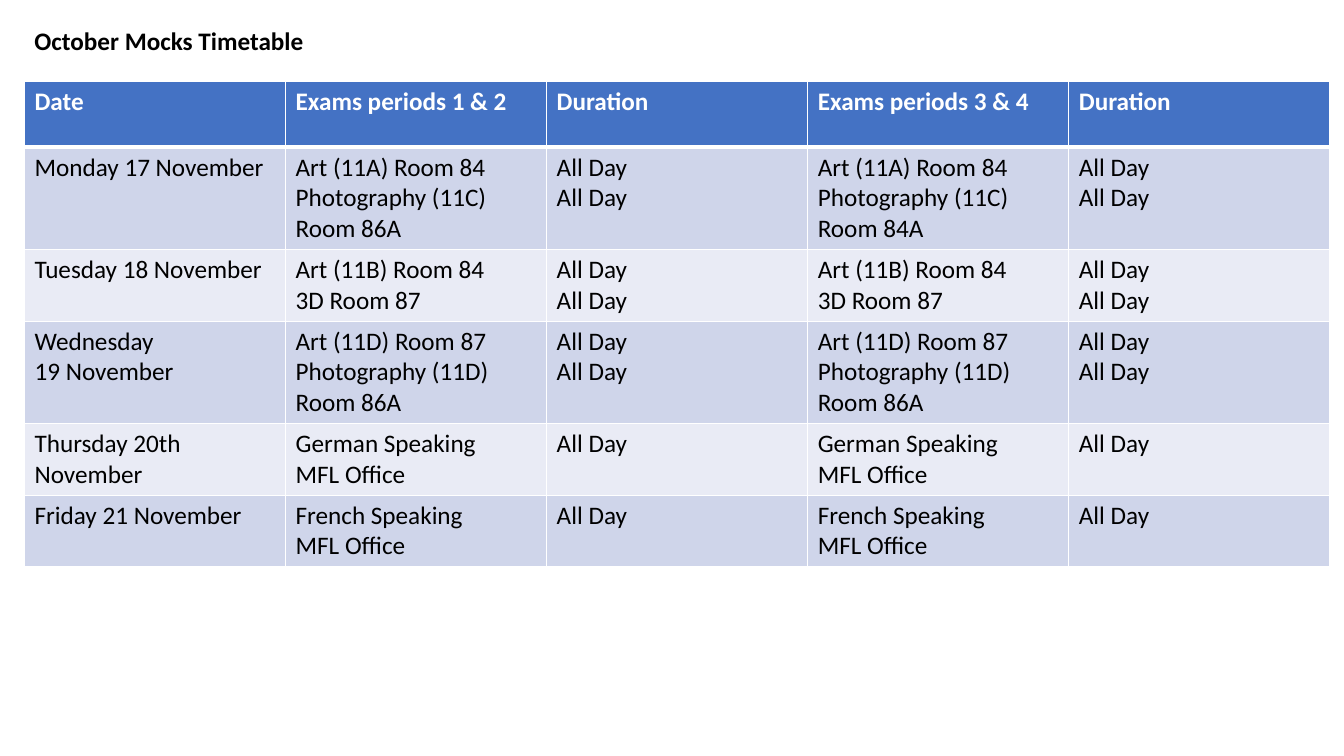
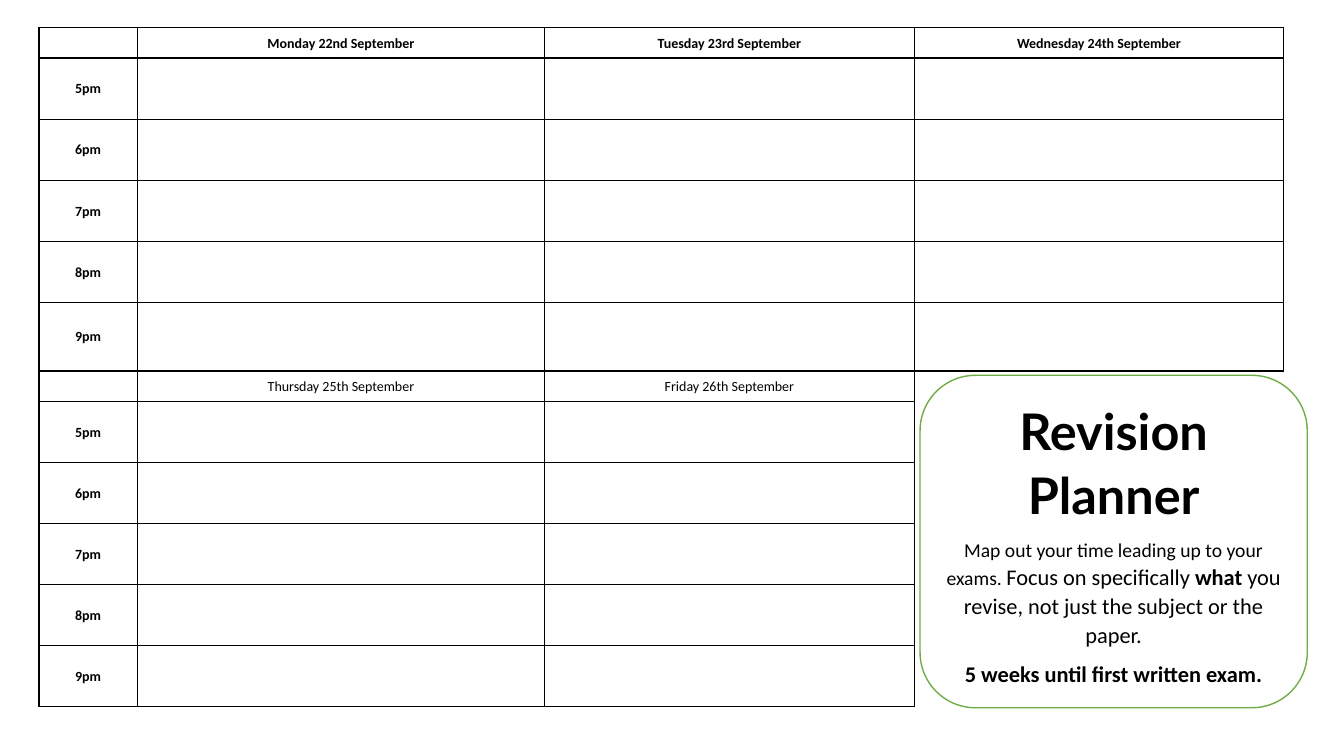
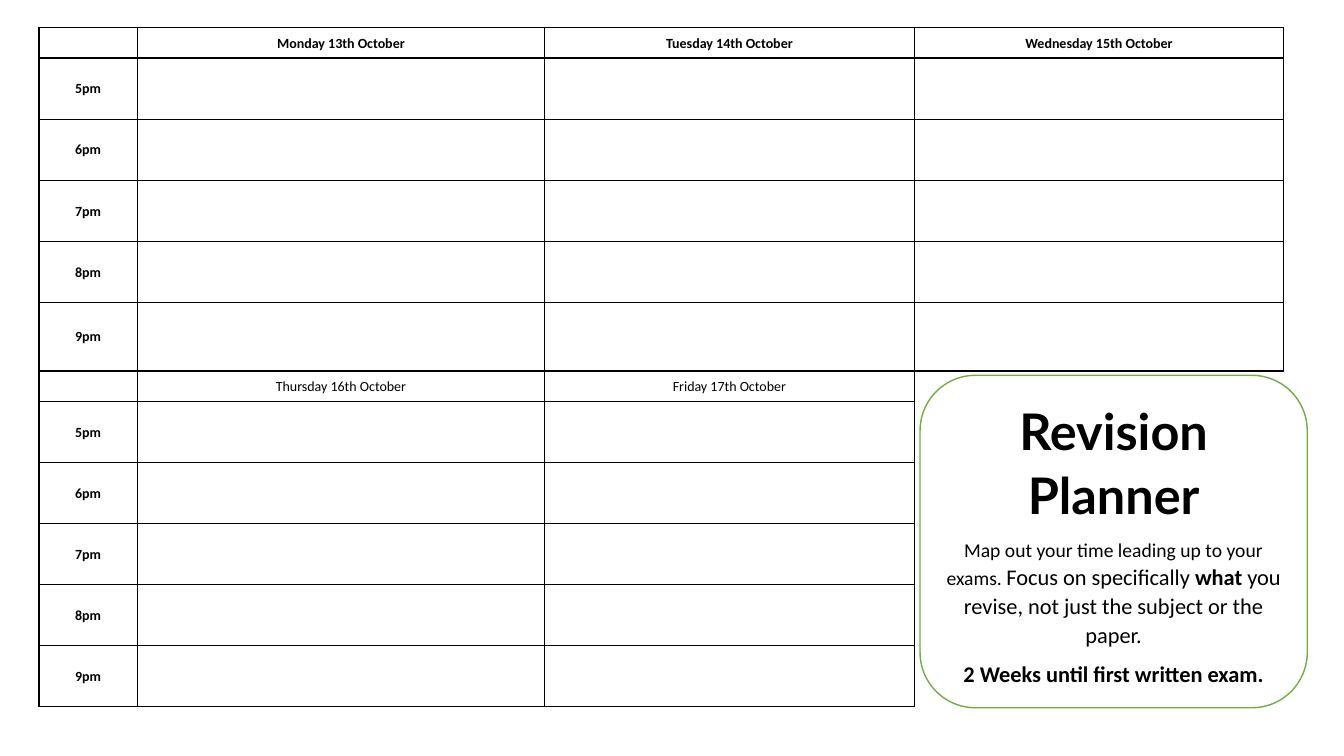
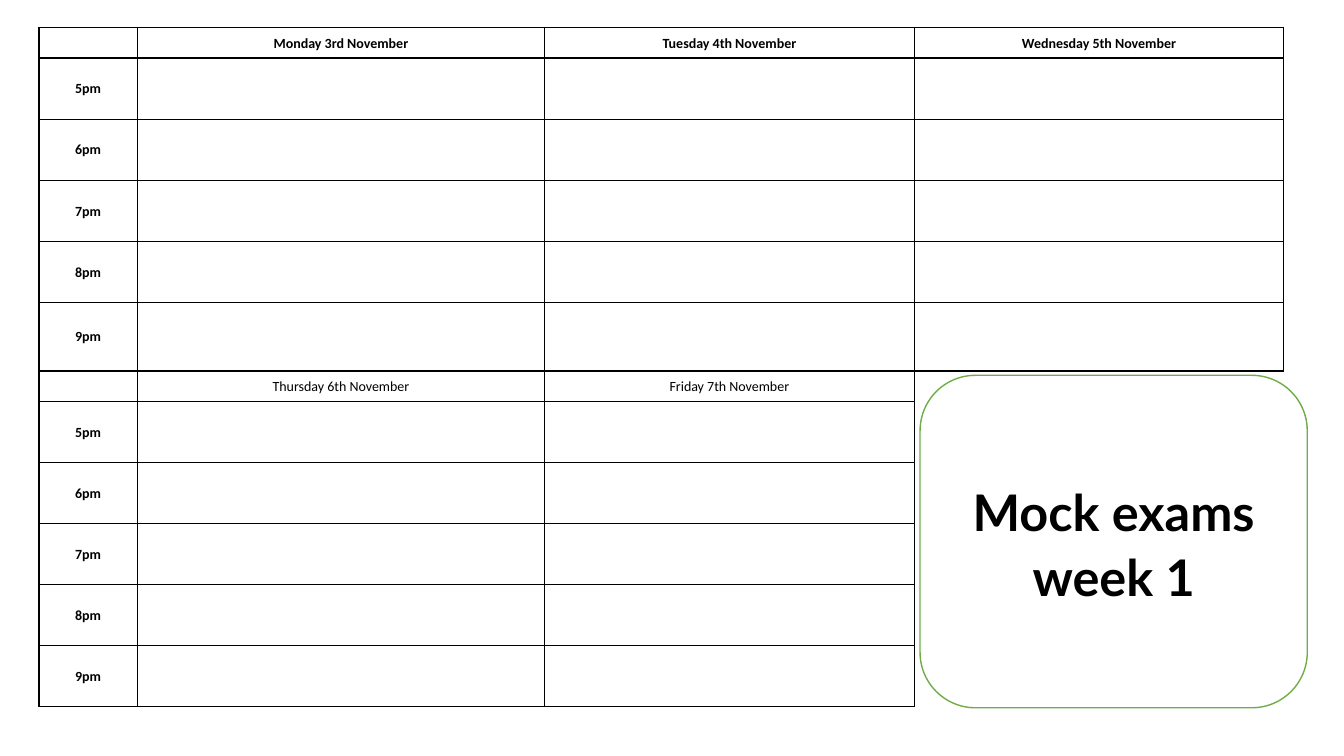
from dataclasses import dataclass, replace

from lxml import etree
from pptx import Presentation
from pptx import util as u
from pptx.dml import color
from pptx.enum import shapes, text
from pptx.oxml import ns

COLOURS = {
    "black": "000000",
    "white": "FFFFFF",
    "header": "4472C4",
    "band_dark": "CFD5EA",
    "band_light": "E9EBF5",
    "outline": "70AD47",
}
NO_BREAK = chr(160)
HOURS = ["5pm", "6pm", "7pm", "8pm", "9pm"]
HOUR_HEIGHT = 43.6
DAY_HEIGHT = 21.9
LAST_HOUR_HEIGHT = 49.2
PLANNER_COLUMNS = [70.2, 291, 264, 264]
PLANNER_ROWS = ([DAY_HEIGHT] + [HOUR_HEIGHT] * 4 + [LAST_HOUR_HEIGHT]
                + [DAY_HEIGHT] + [HOUR_HEIGHT] * 5)
SECOND_HALF = len(HOURS) + 1
EXAM_HEADERS = ["Date", "Exams periods 1 & 2", "Duration", "Exams periods 3 & 4", "Duration"]
EXAM_COLUMNS = [186.5] * 5
EXAM_ROWS = [47.2, 71.3] + [47.2] * 4


@dataclass(frozen=True)
class Style:
    size: float
    bold: bool = False
    colour: str = "black"
    font: str = "Calibri"


@dataclass(frozen=True)
class Span:
    words: str
    style: Style


@dataclass(frozen=True)
class Area:
    left: float
    top: float
    width: float
    height: float

    def lengths(self) -> list:
        return [u.Pt(value) for value in (self.left, self.top, self.width, self.height)]


@dataclass(frozen=True)
class ExamDay:
    date: str
    early: list
    late: list
    sessions: int


@dataclass(frozen=True)
class Week:
    days: list
    panel: list


BODY = Style(18)
BOLD = replace(BODY, bold=True)
HEADER = replace(BOLD, colour="white")
SLOT = Style(10)
SLOT_BOLD = replace(SLOT, bold=True)
PANEL_TITLE = Style(36, bold=True, font="Lato")
PANEL_INTRO = Style(14)
PANEL_BODY = Style(16)
PANEL_BOLD = replace(PANEL_BODY, bold=True)

EXAM_DAYS = [
    ExamDay(f"Monday 17{NO_BREAK}November",
            ["Art (11A) Room 84", "Photography (11C) Room 86A"],
            ["Art (11A) Room 84", "Photography (11C) Room 84A"], 2),
    ExamDay(f"Tuesday 18{NO_BREAK}November",
            *[["Art (11B) Room 84", "3D Room 87"]] * 2, 2),
    ExamDay(f"Wednesday 19{NO_BREAK}November",
            *[["Art (11D) Room 87", "Photography (11D) Room 86A"]] * 2, 2),
    ExamDay("Thursday 20th November", *[["German Speaking", "MFL Office"]] * 2, 1),
    ExamDay(f"Friday 21{NO_BREAK}November", *[["French Speaking", "MFL Office"]] * 2, 1),
]


def revision_panel(countdown: str) -> list:
    return [
        [Span("Revision Planner", PANEL_TITLE)],
        [
            Span("Map out your time leading up to your exams. ", PANEL_INTRO),
            Span("Focus on specifically ", PANEL_BODY),
            Span("what", PANEL_BOLD),
            Span(" you revise, not just the subject or the paper.", PANEL_BODY),
        ],
        [Span(countdown, PANEL_BOLD)],
    ]


WEEKS = [
    Week(["Monday 22nd September", "Tuesday 23rd September", "Wednesday 24th September",
          "Thursday 25th September", "Friday 26th September"],
         revision_panel("5 weeks until first written exam.")),
    Week(["Monday 13th October", "Tuesday 14th October", "Wednesday 15th October",
          "Thursday 16th October", "Friday 17th October"],
         revision_panel("2 Weeks until first written exam.")),
    Week(["Monday 3rd November", "Tuesday 4th November", "Wednesday 5th November",
          "Thursday 6th November", "Friday 7th November"],
         [[Span("Mock exams week 1", PANEL_TITLE)]]),
]


def rgb(name: str) -> color.RGBColor:
    return color.RGBColor.from_string(COLOURS[name])


def format_run(run, style: Style) -> None:
    run.font.size = u.Pt(style.size)
    run.font.bold = style.bold
    run.font.name = style.font
    run.font.color.rgb = rgb(style.colour)


def write(frame, words: str, style: Style) -> None:
    frame.text = words
    for para in frame.paragraphs:
        for run in para.runs:
            format_run(run, style)


def centre(para) -> None:
    para.alignment = text.PP_ALIGN.CENTER
    para.line_spacing = 1.07
    para.space_after = u.Pt(8)


def set_border(cell, side: str, colour: str | None, width: float = 1) -> None:
    properties = cell._tc.get_or_add_tcPr()
    line = etree.SubElement(properties, ns.qn(f"a:ln{side}"), w=str(u.Pt(width)))
    if colour is None:
        etree.SubElement(line, ns.qn("a:noFill"))
        return
    fill = etree.SubElement(line, ns.qn("a:solidFill"))
    etree.SubElement(fill, ns.qn("a:srgbClr"), val=COLOURS[colour])


def paint(item, colour: str) -> None:
    item.fill.solid()
    item.fill.fore_color.rgb = rgb(colour)


def add_grid(page, left: float, top: float, columns: list, rows: list):
    area = Area(left, top, sum(columns), sum(rows))
    grid = page.shapes.add_table(len(rows), len(columns), *area.lengths()).table
    grid.first_row = grid.horz_banding = False
    for column, width in zip(grid.columns, columns):
        column.width = u.Pt(width)
    for row, height in zip(grid.rows, rows):
        row.height = u.Pt(height)
    return grid


def draw_timetable(page) -> None:
    grid = add_grid(page, 17.5, 57.9, EXAM_COLUMNS, EXAM_ROWS)
    content = [EXAM_HEADERS]
    for day in EXAM_DAYS:
        duration = "\n".join(["All Day"] * day.sessions)
        content.append([day.date, "\n".join(day.early), duration,
                        "\n".join(day.late), duration])
    for row, entries in enumerate(content):
        fill = "header" if row == 0 else ("band_light", "band_dark")[row % 2]
        for column, words in enumerate(entries):
            cell = grid.cell(row, column)
            for side in "LRTB":
                thick = (row, side) in ((0, "B"), (1, "T"))
                set_border(cell, side, "white", 3 if thick else 1)
            paint(cell, fill)
            write(cell.text_frame, words, BODY if row else HEADER)
    box = page.shapes.add_textbox(*Area(17.5, 14.5, 216, 29).lengths())
    box.text_frame.word_wrap = True
    box.text_frame.auto_size = text.MSO_AUTO_SIZE.SHAPE_TO_FIT_TEXT
    write(box.text_frame, "October Mocks Timetable", BOLD)


def draw_slot(cell, words: str, style: Style) -> None:
    cell.vertical_anchor = text.MSO_ANCHOR.MIDDLE
    cell.margin_left = cell.margin_right = u.Pt(3.6)
    cell.margin_top = cell.margin_bottom = 0
    if words:
        write(cell.text_frame, words, style)
        centre(cell.text_frame.paragraphs[0])
    else:
        para = cell.text_frame.paragraphs[0]
        etree.SubElement(para._p, ns.qn("a:endParaRPr"), sz=str(int(style.size * 100)))


def draw_planner(page, week: Week) -> None:
    grid = add_grid(page, 27.8, 19.6, PLANNER_COLUMNS, PLANNER_ROWS)
    hour_rows = [[hour, "", "", ""] for hour in HOURS]
    content = [["", *week.days[:3]], *hour_rows, ["", *week.days[3:], ""], *hour_rows]
    for row, entries in enumerate(content):
        for column, words in enumerate(entries):
            cell = grid.cell(row, column)
            sides = "LRTB"
            if column == 3 and row >= SECOND_HALF:
                sides = "LT" if row == SECOND_HALF else "L"
            for side in "LRTB":
                set_border(cell, side, "black" if side in sides else None)
            paint(cell, "white")
            draw_slot(cell, words, SLOT if row == SECOND_HALF else SLOT_BOLD)
    draw_panel(page, week.panel)


def draw_panel(page, paragraphs: list) -> None:
    area = Area(657.2, 268.1, 276.6, 237.5)
    panel = page.shapes.add_shape(shapes.MSO_SHAPE.ROUNDED_RECTANGLE, *area.lengths())
    panel.shadow.inherit = False
    paint(panel, "white")
    panel.line.color.rgb = rgb("outline")
    panel.line.width = u.Pt(1)
    frame = panel.text_frame
    frame.word_wrap = True
    frame.vertical_anchor = text.MSO_ANCHOR.MIDDLE
    for index, spans in enumerate(paragraphs):
        para = frame.add_paragraph() if index else frame.paragraphs[0]
        centre(para)
        for span in spans:
            run = para.add_run()
            run.text = span.words
            format_run(run, span.style)


def main() -> None:
    deck = Presentation()
    deck.slide_width, deck.slide_height = u.Pt(960), u.Pt(540)
    blank = deck.slide_layouts[6]
    draw_timetable(deck.slides.add_slide(blank))
    for week in WEEKS:
        draw_planner(deck.slides.add_slide(blank), week)
    deck.save("out.pptx")


if __name__ == "__main__":
    main()
